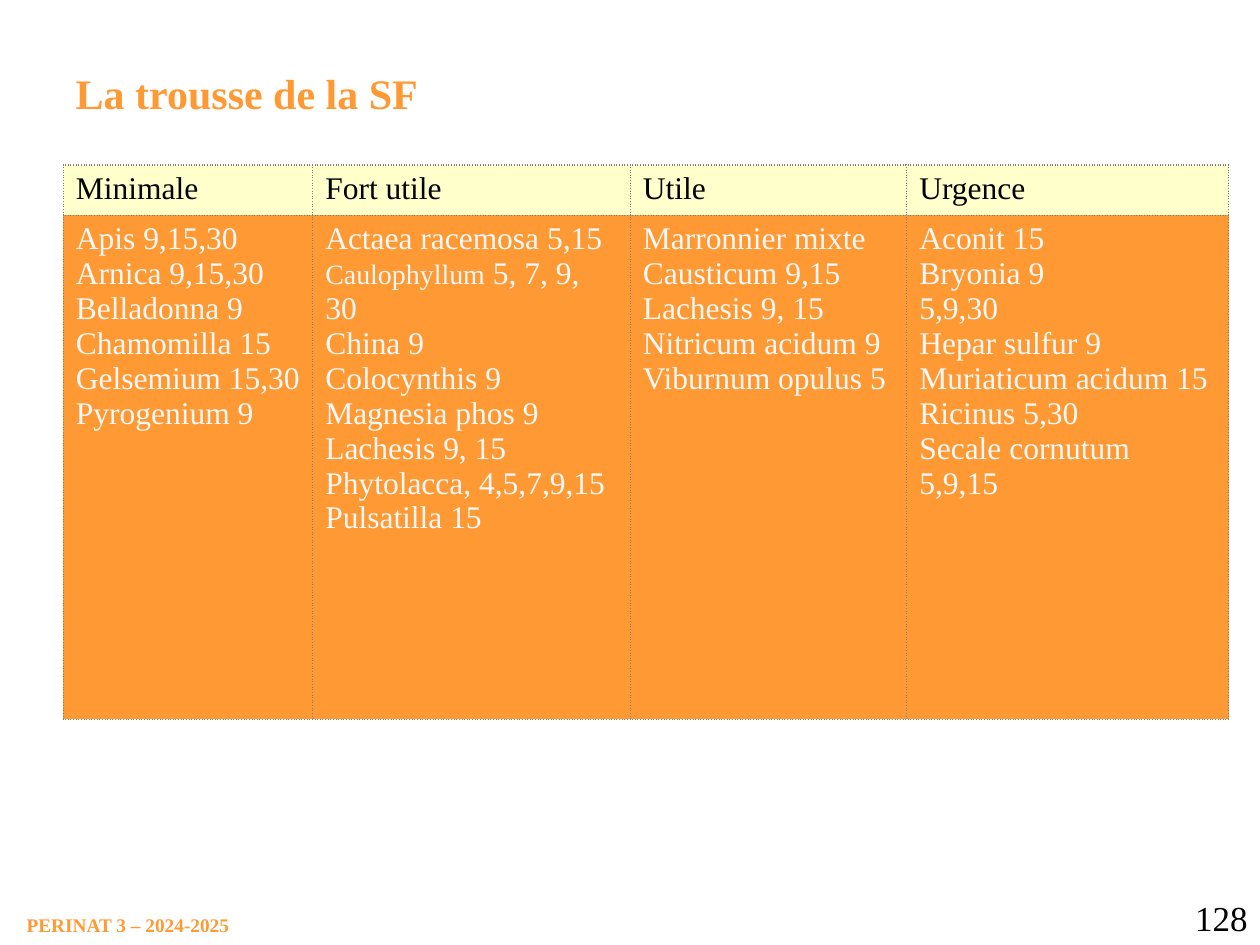
from lxml import etree
from pptx import Presentation
from pptx.dml.color import RGBColor
from pptx.enum.text import PP_ALIGN
from pptx.oxml import parse_xml
from pptx.util import Pt

LEFT = PP_ALIGN.LEFT
RIGHT = PP_ALIGN.RIGHT

ORANGE = RGBColor(0xFF, 0x99, 0x33)
CREAM = RGBColor(0xFF, 0xFF, 0xCC)
BLACK = RGBColor(0, 0, 0)
PALE = RGBColor(0xF8, 0xF8, 0xF8)
GREY = RGBColor(0x80, 0x80, 0x80)

FONT = "Times New Roman"
SIZE = 18
WIDTHS = [142.5, 181.5, 158, 184]
HEIGHTS = [28.8, 288]
NS = "http://schemas.openxmlformats.org/drawingml/2006/main"

KIT = {
    "Minimale": [
        "Apis 9,15,30", "Arnica 9,15,30", "Belladonna 9",
        "Chamomilla 15", "Gelsemium 15,30", "Pyrogenium 9",
    ],
    "Fort utile": [
        "Actaea racemosa 5,15",
        [("Caulophyllum", 16), (" 5, 7, 9, 30", SIZE)],
        "China 9", "Colocynthis 9", "Magnesia phos 9",
        "Lachesis 9, 15", "Phytolacca, 4,5,7,9,15", "Pulsatilla 15",
    ],
    "Utile": [
        "Marronnier mixte", "Causticum 9,15", "Lachesis 9, 15",
        "Nitricum acidum 9", "Viburnum opulus 5",
    ],
    "Urgence": [
        "Aconit 15", "Bryonia 9", "5,9,30", "Hepar sulfur 9",
        "Muriaticum acidum 15", "Ricinus 5,30", "Secale cornutum", "5,9,15",
    ],
}


def add_run(para, text, size, color, bold=False):
    run = para.add_run()
    run.text = text
    font = run.font
    font.name = FONT
    font.size = Pt(size)
    font.bold = bold
    font.color.rgb = color


def add_label(slide, box, text, size, color, bold=False,
              align=LEFT, inset=True, wrap=True):
    shape = slide.shapes.add_textbox(*map(Pt, box))
    frame = shape.text_frame
    frame.word_wrap = wrap
    if not inset:
        frame.margin_left = frame.margin_right = 0
        frame.margin_top = frame.margin_bottom = 0
    para = frame.paragraphs[0]
    para.alignment = align
    add_run(para, text, size, color, bold)


def add_border(cell):
    props = cell._tc.get_or_add_tcPr()
    for side in ("lnL", "lnR", "lnT", "lnB"):
        line = parse_xml(f'<a:{side} xmlns:a="{NS}" w="{Pt(1)}"/>')
        fill = etree.SubElement(line, f"{{{NS}}}solidFill")
        etree.SubElement(fill, f"{{{NS}}}srgbClr", val=str(GREY))
        etree.SubElement(line, f"{{{NS}}}prstDash", val="sysDot")
        props.append(line)


def fill_cell(cell, lines, color, fill):
    add_border(cell)
    cell.fill.solid()
    cell.fill.fore_color.rgb = fill
    frame = cell.text_frame
    for i, line in enumerate(lines):
        para = frame.add_paragraph() if i else frame.paragraphs[0]
        runs = [(line, SIZE)] if isinstance(line, str) else line
        for text, size in runs:
            add_run(para, text, size, color)


def add_kit(slide):
    frame = slide.shapes.add_table(
        len(HEIGHTS), len(WIDTHS), Pt(36.2), Pt(94.3),
        Pt(sum(WIDTHS)), Pt(sum(HEIGHTS)))
    table = frame.table
    for row, height in zip(table.rows, HEIGHTS):
        row.height = Pt(height)
    for col, (head, lines) in enumerate(KIT.items()):
        table.columns[col].width = Pt(WIDTHS[col])
        fill_cell(table.cell(0, col), [head], BLACK, CREAM)
        fill_cell(table.cell(1, col), lines, PALE, ORANGE)


def main():
    deck = Presentation()
    deck.slide_width, deck.slide_height = Pt(720), Pt(540)
    slide = deck.slides.add_slide(deck.slide_layouts[6])
    add_label(slide, (15.2, 522, 118, 13.5), "PERINAT 3 – 2024-2025", 11,
              ORANGE, bold=True, inset=False, wrap=False)
    add_label(slide, (660, 509, 60, 31), "128", 20, BLACK, align=RIGHT)
    add_label(slide, (36.2, 35.3, 648, 39), "La trousse de la SF", 24,
              ORANGE, bold=True)
    add_kit(slide)
    deck.save("out.pptx")


if __name__ == "__main__":
    main()
